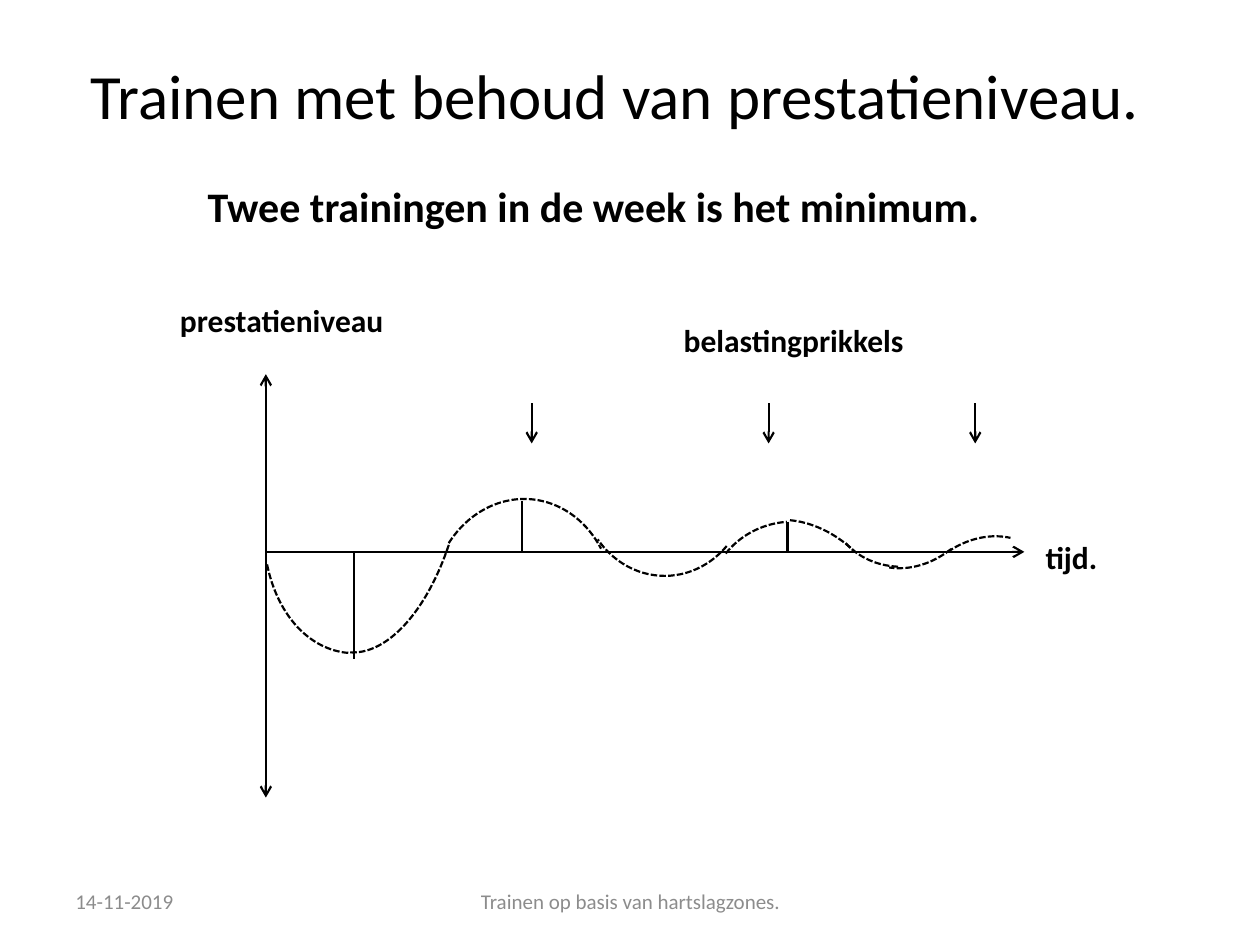
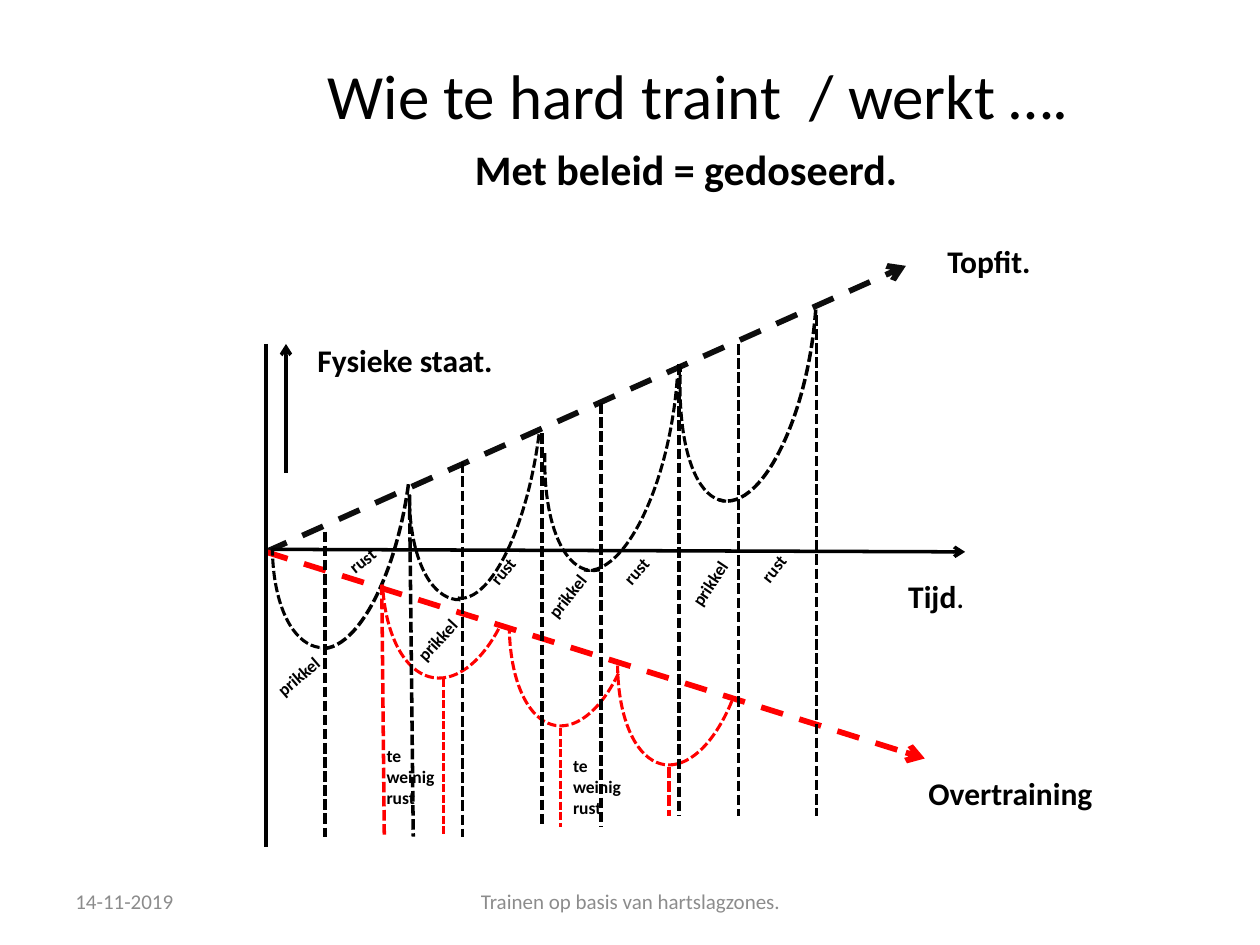
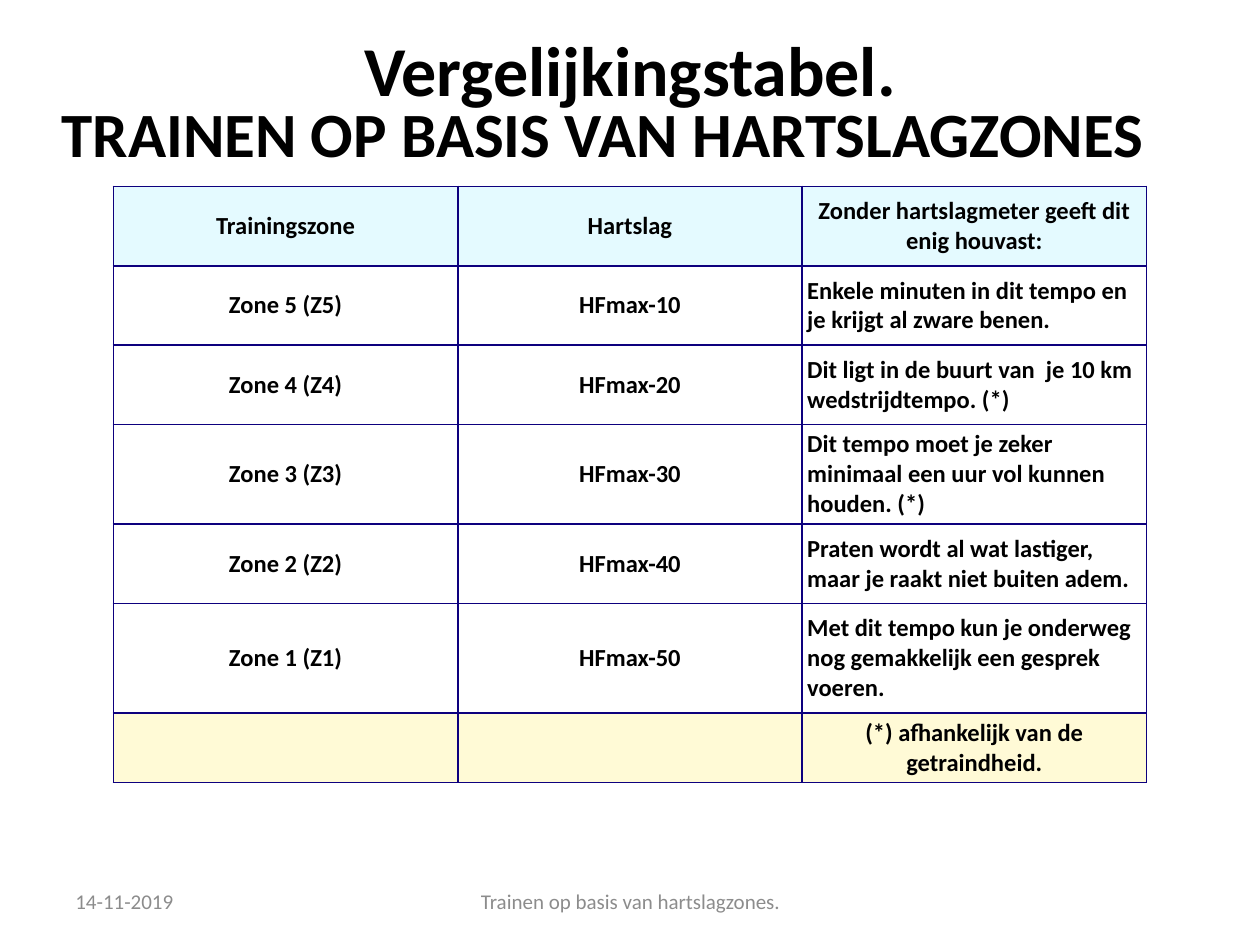
"""Build three slides about training by heart-rate zones."""
from dataclasses import dataclass

from lxml import etree
from pptx import Presentation
from pptx.dml.color import RGBColor
from pptx.enum import dml, shapes, text
from pptx.oxml.ns import qn
from pptx.util import Inches, Pt


@dataclass(frozen=True)
class Theme:
    """Hold the colours, font and type sizes of the deck."""
    font: str = "Calibri"
    ink: str = "000000"
    alarm: str = "FF0000"
    muted: str = "8C8C8C"
    border: str = "0D007E"
    header: str = "E4FAFF"
    note: str = "FFFAD6"
    banner: int = 40
    title: int = 36
    subtitle: int = 24
    label: int = 18
    cell: int = 14
    footer: int = 12
    small: int = 10


THEME = Theme()
LEFT, CENTER, RIGHT = text.PP_ALIGN.LEFT, text.PP_ALIGN.CENTER, text.PP_ALIGN.RIGHT
TOP, MIDDLE = text.MSO_ANCHOR.TOP, text.MSO_ANCHOR.MIDDLE
DASH, SHORT_DASH = dml.MSO_LINE.DASH, dml.MSO_LINE.SQUARE_DOT

ZONES = [
    ("Trainingszone", "Hartslag", "Zonder hartslagmeter geeft dit enig houvast:"),
    ("Zone 5 (Z5)", "HFmax-10", "Enkele minuten in dit tempo en je krijgt al zware benen."),
    ("Zone 4 (Z4)", "HFmax-20", "Dit ligt in de buurt van  je 10 km wedstrijdtempo. (*)"),
    ("Zone 3 (Z3)", "HFmax-30",
     "Dit tempo moet je zeker minimaal een uur vol kunnen houden. (*)"),
    ("Zone 2 (Z2)", "HFmax-40",
     "Praten wordt al wat lastiger, maar je raakt niet buiten adem."),
    ("Zone 1 (Z1)", "HFmax-50",
     "Met dit tempo kun je onderweg nog gemakkelijk een gesprek voeren."),
    ("", "", "(*) afhankelijk van de getraindheid."),
]
ZONE_HEIGHTS = [0.63] * 5 + [0.87, 0.38]


def write(frame, words, size=THEME.label, bold=True, color=THEME.ink,
          align=LEFT, anchor=TOP, plain_end=""):
    """Fill a text frame with one formatted paragraph."""
    frame.word_wrap = True
    frame.vertical_anchor = anchor
    paragraph = frame.paragraphs[0]
    paragraph.alignment = align
    for part, heavy in ((words, bold), (plain_end, False)):
        if part:
            run = paragraph.add_run()
            run.text = part
            run.font.name = THEME.font
            run.font.size = Pt(size)
            run.font.bold = heavy
            run.font.color.rgb = RGBColor.from_string(color)


def add_label(slide, words, box, turn=0, grow=True, **style):
    """Add a text box, turned by a number of degrees."""
    label = slide.shapes.add_textbox(*map(Inches, box))
    write(label.text_frame, words, **style)
    label.text_frame.auto_size = (
        text.MSO_AUTO_SIZE.SHAPE_TO_FIT_TEXT if grow else text.MSO_AUTO_SIZE.NONE)
    label.rotation = turn


def add_slide(deck, title, box, bold=False):
    """Add a slide with its title and the shared footer."""
    slide = deck.slides.add_slide(deck.slide_layouts[5])
    heading = slide.shapes.title
    heading.left, heading.top, heading.width, heading.height = map(Inches, box)
    write(heading.text_frame, title, size=THEME.title, bold=bold, anchor=MIDDLE)
    heading.text_frame.auto_size = text.MSO_AUTO_SIZE.NONE
    footer = dict(size=THEME.footer, bold=False, color=THEME.muted,
                  anchor=MIDDLE, grow=False)
    add_label(slide, "14-11-2019", (0.5, 6.95, 2.33, 0.4), **footer)
    add_label(slide, "Trainen op basis van hartslagzones.",
              (3.42, 6.95, 3.17, 0.4), align=CENTER, **footer)
    return slide


def style_line(line, color, width, dash):
    """Set the colour, width and dash of a line."""
    line.color.rgb = RGBColor.from_string(color)
    line.width = Pt(width)
    if dash:
        line.dash_style = dash


def add_line(slide, start, end, color=THEME.ink, width=2.0, dash=None,
             ends=(), opacity=100):
    """Draw a straight line with arrowheads at the named ends."""
    stroke = slide.shapes.add_connector(
        shapes.MSO_CONNECTOR.STRAIGHT, *map(Inches, start + end))
    style_line(stroke.line, color, width, dash)
    outline = stroke.line._get_or_add_ln()
    if opacity < 100:
        tint = outline.find(".//" + qn("a:srgbClr"))
        etree.SubElement(tint, qn("a:alpha"), val=str(opacity * 1000))
    for end_name in ends:
        etree.SubElement(outline, qn(f"a:{end_name}End"), type="arrow")
    etree.SubElement(stroke._element.spPr, qn("a:effectLst"))


def add_arc(slide, box, turn, first, last, color=THEME.ink, width=1.75):
    """Draw a dashed arc between two angles in degrees."""
    curve = slide.shapes.add_shape(shapes.MSO_SHAPE.ARC, *map(Inches, box))
    curve.adjustments[0] = first * 0.6
    curve.adjustments[1] = last * 0.6
    curve.rotation = turn
    curve.shadow.inherit = False
    curve.fill.background()
    style_line(curve.line, color, width, SHORT_DASH)


def add_borders(cell):
    """Draw the four borders of a table cell."""
    properties = cell._tc.get_or_add_tcPr()
    for place, side in enumerate("LRTB"):
        edge = etree.Element(qn(f"a:ln{side}"), w=str(Pt(1)))
        fill = etree.SubElement(edge, qn("a:solidFill"))
        etree.SubElement(fill, qn("a:srgbClr"), val=THEME.border)
        properties.insert(place, edge)


def add_zone_table(slide):
    """Add the table that compares the training zones."""
    grid = slide.shapes.add_table(
        len(ZONES), 3, *map(Inches, (0.9, 1.48, 8.2, 4.7))).table
    grid.first_row = grid.horz_banding = False
    last_row = len(ZONES) - 1
    fills = {0: THEME.header, last_row: THEME.note}
    for row, (zone, height) in enumerate(zip(ZONES, ZONE_HEIGHTS)):
        grid.rows[row].height = Inches(height)
        for column, words in enumerate(zone):
            cell = grid.cell(row, column)
            cell.margin_left = cell.margin_right = Inches(0.04)
            cell.margin_top = cell.margin_bottom = Inches(0.04)
            cell.vertical_anchor = MIDDLE
            if row in fills:
                cell.fill.solid()
                cell.fill.fore_color.rgb = RGBColor.from_string(fills[row])
            else:
                cell.fill.background()
            add_borders(cell)
            explains = column == 2 and row not in fills
            write(cell.text_frame, words, size=THEME.cell, anchor=MIDDLE,
                  align=LEFT if explains else CENTER)
            cell.vertical_anchor = MIDDLE


def build_maintenance(deck):
    """Show the fading wave around a constant performance level."""
    slide = add_slide(deck, "Trainen met behoud van prestatieniveau.",
                      (0.62, 0.39, 9.19, 0.71))
    add_label(slide, "Twee trainingen in de week is het minimum.",
              (1.55, 1.38, 6.55, 0.5), size=THEME.subtitle)
    add_label(slide, "prestatieniveau", (1.33, 2.34, 2.19, 0.4))
    add_label(slide, "belastingprikkels", (4.3, 2.5, 2.97, 0.4), align=RIGHT)
    add_label(slide, "tijd.", (8.2, 4.22, 0.7, 0.4))
    wave = [
        ((2.1, 3, 1.58, 2.19), 188.6, 268.06, 325.41),
        ((2.24, 2.32, 1.44, 2.87), 188.6, 214.83, 269.39),
        ((3.42, 3.96, 1.45, 1.66), 4.5, 214.83, 320.72),
        ((4.61, 3.12, 1.33, 1.45), 180, 224.78, 320.72),
        ((5.63, 4.14, 1.33, 1.25), 0, 214.83, 265.5),
        ((5.59, 4.22, 1.56, 1.23), 47.1, 214.83, 265.5),
        ((6.68, 3.07, 1.24, 1.52), 235.4, 229.08, 265.5),
        ((6.53, 2.81, 1.37, 1.71), 195.2, 229.08, 265.5),
        ((7.12, 4.24, 1.37, 1.71), 19.1, 229.08, 265.5),
    ]
    for arc in wave:
        add_arc(slide, *arc, width=1.25)
    axis = 4.38
    add_line(slide, (2.11, axis), (8.13, axis), width=1.25, ends=["tail"])
    add_line(slide, (2.11, 2.97), (2.11, 6.33), width=1.25, ends=["head", "tail"])
    for x, peak in ((2.81, 5.23), (4.14, 3.98), (6.25, 4.14)):
        add_line(slide, (x, min(peak, axis)), (x, max(peak, axis)), width=1.25)
    for x in (4.22, 6.1, 7.74):
        add_line(slide, (x, 3.2), (x, 3.52), width=1.25, ends=["tail"])


def build_overtraining(deck):
    """Compare dosed training with overtraining."""
    slide = add_slide(deck, "Wie te hard traint  / werkt ….", (2.5, 0.39, 6.88, 0.71))
    add_label(slide, "Met beleid = gedoseerd.", (3.67, 1.09, 3.75, 0.5),
              size=THEME.subtitle)
    start = (2.11, 4.38)
    add_line(slide, start, (7.19, 2.11), width=3.25, dash=DASH,
             ends=["tail"], opacity=95)
    add_line(slide, start, (7.34, 6.02), THEME.alarm, 3.25, DASH, ["tail"])
    add_line(slide, (2.16, 4.36), (7.66, 4.38), ends=["tail"])
    add_line(slide, (2.11, 2.73), (2.11, 6.72))
    add_line(slide, (2.27, 3.75), (2.27, 2.73), ends=["tail"])

    tilt = 188.6
    dosed_dips = [
        ((2.18, 3.04, 1.02, 2.11), 269.78, 325.41, 1.75),
        ((3.27, 2.56, 1.02, 2.21), 267.96, 325.41, 1.75),
        ((4.35, 2.09, 1.02, 2.45), 266.09, 325.41, 1.75),
        ((5.43, 1.31, 1.02, 2.68), 268.98, 325.41, 1.75),
        ((2.22, 2.48, 1.02, 2.68), 173.97, 269.39, 2),
        ((3.39, 2.19, 0.88, 2.57), 167.75, 271.23, 1.75),
        ((4.33, 1.86, 1.02, 2.68), 151.46, 270.17, 1.75),
        ((5.43, 1.31, 1.02, 2.68), 151.46, 271.54, 2),
    ]
    for box, first, last, width in dosed_dips:
        add_arc(slide, box, tilt, first, last, width=width)
    overtrained_dips = [
        ((3.05, 3.26, 1.1, 2.13), 233.16, 322.31),
        ((4.06, 3.66, 1.02, 2.11), 233.16, 325.41),
        ((4.92, 3.97, 1.02, 2.11), 226.26, 325.41),
    ]
    for box, first, last in overtrained_dips:
        add_arc(slide, box, tilt, first, last, THEME.alarm)

    dosed_drops = [
        (2.58, 4.22, 2.58, 6.64), (3.25, 3.93, 3.28, 6.64),
        (3.67, 3.67, 3.67, 6.64), (4.3, 3.44, 4.3, 6.56),
        (4.77, 3.2, 4.77, 6.56), (5.39, 2.89, 5.39, 6.48),
        (5.86, 2.73, 5.86, 6.48), (6.48, 2.5, 6.48, 6.48),
    ]
    for drop in dosed_drops:
        add_line(slide, drop[:2], drop[2:], dash=SHORT_DASH)
    overtrained_drops = [
        ((3.03, 4.64), (3.05, 6.64), 2), ((3.52, 5.39), (3.52, 6.64), 1.5),
        ((4.45, 5.78), (4.45, 6.56), 1.5), ((5.31, 6.09), (5.31, 6.48), 2),
    ]
    for top, bottom, width in overtrained_drops:
        add_line(slide, top, bottom, THEME.alarm, width, SHORT_DASH)

    add_label(slide, "Tijd", (7.11, 4.53, 0.7, 0.4), plain_end=".")
    add_label(slide, "Overtraining", (7.27, 6.09, 1.8, 0.4))
    add_label(slide, "Topfit.", (7.42, 1.87, 0.94, 0.4))
    add_label(slide, "Fysieke staat.", (2.42, 2.66, 1.68, 0.4))
    phases = {
        ("prikkel", 0.63, 0.27): [(2.07, 5.22, 319.3), (3.17, 4.93, 312.4),
                                  (4.2, 4.58, 308.5), (5.33, 4.48, 303.8)],
        ("rust", 0.47, 0.27): [(2.66, 4.3, 321.4), (3.77, 4.38, 309),
                               (4.83, 4.38, 311.3), (5.92, 4.36, 308.8)],
        ("te weinig rust", 0.63, 0.61): [(2.97, 5.86, 0), (4.45, 5.94, 0)],
    }
    for (phase, width, height), places in phases.items():
        for left, top, turn in places:
            add_label(slide, phase, (left, top, width, height), turn,
                      size=THEME.small)


def build_comparison(deck):
    """Show the table of heart-rate zones."""
    slide = add_slide(deck, "TRAINEN OP BASIS VAN HARTSLAGZONES",
                      (0.39, 0.7, 9.14, 0.7), bold=True)
    add_zone_table(slide)
    add_label(slide, "Vergelijkingstabel.", (0.39, 0.16, 9.22, 0.77),
              size=THEME.banner, align=CENTER)


def main():
    """Build and save the deck."""
    deck = Presentation()
    deck.slide_width, deck.slide_height = Inches(10), Inches(7.5)
    build_maintenance(deck)
    build_overtraining(deck)
    build_comparison(deck)
    deck.save("out.pptx")


if __name__ == "__main__":
    main()
